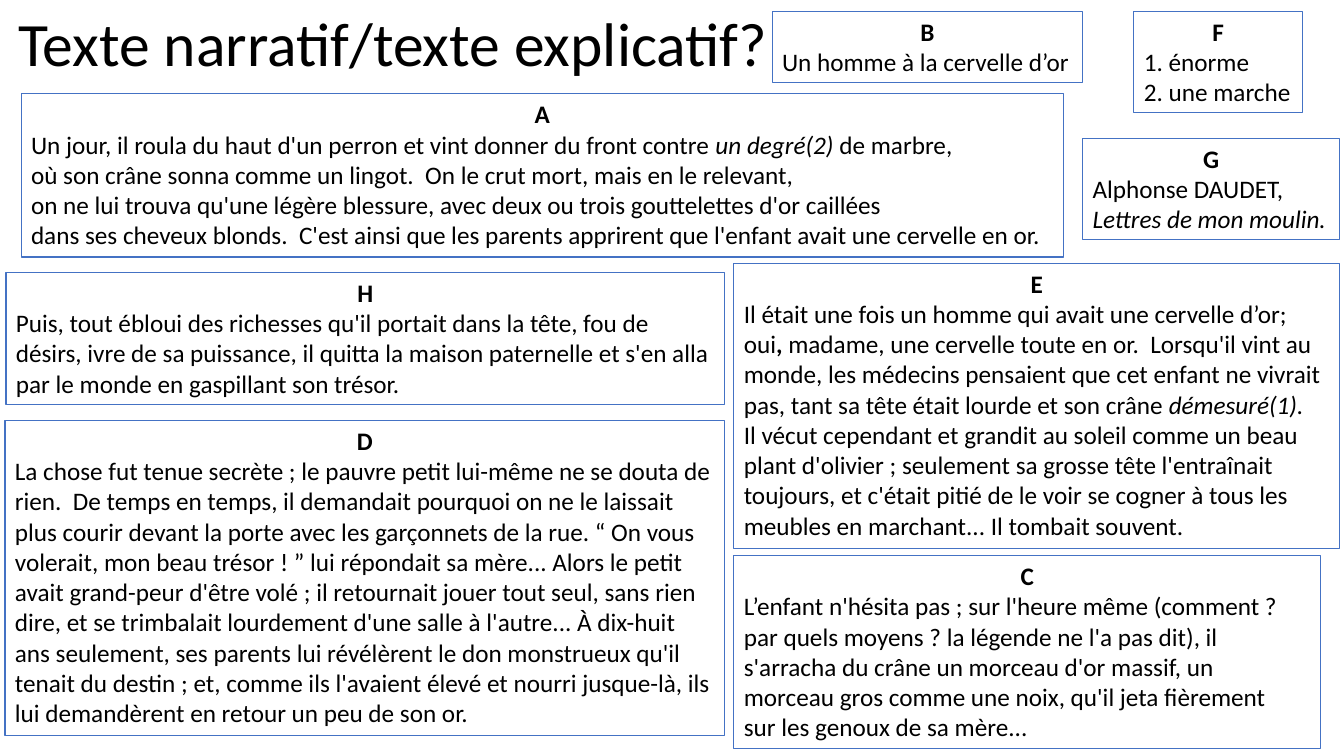
from pptx import Presentation
from pptx.dml.color import RGBColor
from pptx.enum.shapes import MSO_SHAPE
from pptx.enum.text import MSO_ANCHOR, MSO_AUTO_SIZE, PP_ALIGN
from pptx.util import Pt

COLORS = {"text": "000000", "border": "4472C4"}

# letter, (left, top, width, height), wrap, paragraphs;
# a paragraph is a string or a list of (text, style) pairs
EXTRACTS = [
    ("A", (15.1, 67, 744.5, 116.6), False, [
        [("Un jour, il roula du haut d'un perron et vint donner du front contre ", ""),
         ("un degré(2) ", "italic"), ("de marbre,", "")],
        "où son crâne sonna comme un lingot.  On le crut mort, mais en le relevant,",
        "on ne lui trouva qu'une légère blessure, avec deux ou trois gouttelettes d'or caillées",
        "dans ses cheveux blonds.  C'est ainsi que les parents apprirent que l'enfant "
        "avait une cervelle en or.",
    ]),
    ("E", (524.2, 187.9, 432.7, 203.8), True, [
        "Il était une fois un homme qui avait une cervelle d’or;",
        [("oui", ""), (", ", "bold"),
         ("madame, une cervelle toute en or.  Lorsqu'il vint au monde, les médecins "
          "pensaient que cet enfant ne vivrait pas, tant sa tête était lourde et son crâne ", ""),
         ("démesuré(1).", "italic")],
        "Il vécut cependant et grandit au soleil comme un beau plant d'olivier ; seulement "
        "sa grosse tête l'entraînait toujours, et c'était pitié de le voir se cogner à tous "
        "les meubles en marchant... Il tombait souvent.",
    ]),
    ("F", (810, 7.9, 120.2, 72.7), False, ["1. énorme", "2. une marche"]),
    ("G", (773.3, 98.6, 183.6, 72.7), False, [
        "Alphonse DAUDET,",
        [("Lettres de mon moulin.", "italic")],
    ]),
    ("H", (4.3, 194.4, 513.4, 94.3), True, [
        "Puis, tout ébloui des richesses qu'il portait dans la tête, fou de désirs, ivre de sa "
        "puissance, il quitta la maison paternelle et s'en alla par le monde en gaspillant "
        "son trésor.",
    ]),
    ("B", (551.5, 7.9, 221.8, 51.1), False, ["Un homme à la cervelle d’or"]),
    ("D", (3.6, 300.2, 514.1, 225.4), True, [
        "La chose fut tenue secrète ; le pauvre petit lui-même ne se douta de",
        "rien.  De temps en temps, il demandait pourquoi on ne le laissait plus courir devant "
        "la porte avec les garçonnets de la rue. “ On vous",
        "volerait, mon beau trésor ! ” lui répondait sa mère... Alors le petit",
        "avait grand-peur d'être volé ; il retournait jouer tout seul, sans rien",
        "dire, et se trimbalait lourdement d'une salle à l'autre... À dix-huit ans seulement, "
        "ses parents lui révélèrent le don monstrueux qu'il tenait du destin ; et, comme ils "
        "l'avaient élevé et nourri jusque-là, ils lui demandèrent en retour un peu de son or.",
    ]),
    ("C", (524.2, 396.7, 419, 138.2), True, [
        "L’enfant n'hésita pas ; sur l'heure même (comment ?",
        "par quels moyens ? la légende ne l'a pas dit), il",
        "s'arracha du crâne un morceau d'or massif, un",
        "morceau gros comme une noix, qu'il jeta fièrement",
        "sur les genoux de sa mère...",
    ]),
]


class Page:
    font = "Calibri"
    title_size = 44
    body_size = 18
    border_width = 0.75

    def __init__(self, slide):
        self.s = slide

    def format_run(self, r, size, style=""):
        r.font.name = self.font
        r.font.size = Pt(size)
        r.font.color.rgb = RGBColor.from_string(COLORS["text"])
        r.font.bold = style == "bold"
        r.font.italic = style == "italic"

    def title(self, text, box):
        tf = self.s.shapes.add_textbox(*map(Pt, box)).text_frame
        tf.word_wrap = True
        tf.vertical_anchor = MSO_ANCHOR.MIDDLE
        tf.text = text
        p = tf.paragraphs[0]
        p.alignment = PP_ALIGN.CENTER
        p.line_spacing = 0.9
        self.format_run(p.runs[0], self.title_size)

    def paragraph(self, p, content, align=PP_ALIGN.LEFT):
        p.alignment = align
        pairs = [(content, "")] if isinstance(content, str) else content
        for text, style in pairs:
            r = p.add_run()
            r.text = text
            self.format_run(r, self.body_size, style)

    def extract(self, letter, box, wrap, paragraphs):
        """Draw a bordered box: centred bold letter above left-aligned text."""
        sp = self.s.shapes.add_shape(MSO_SHAPE.RECTANGLE, *map(Pt, box))
        sp.shadow.inherit = False
        sp.fill.background()
        sp.line.color.rgb = RGBColor.from_string(COLORS["border"])
        sp.line.width = Pt(self.border_width)
        tf = sp.text_frame
        tf.word_wrap = wrap
        tf.auto_size = MSO_AUTO_SIZE.SHAPE_TO_FIT_TEXT
        tf.vertical_anchor = MSO_ANCHOR.TOP
        self.paragraph(tf.paragraphs[0], [(letter, "bold")], PP_ALIGN.CENTER)
        for content in paragraphs:
            self.paragraph(tf.add_paragraph(), content)


def main():
    prs = Presentation()
    prs.slide_width, prs.slide_height = Pt(960), Pt(540)
    page = Page(prs.slides.add_slide(prs.slide_layouts[6]))
    page.title("Texte narratif/texte explicatif?", (-67.7, -18.7, 697, 104.4))
    for extract in EXTRACTS:
        page.extract(*extract)
    prs.save("out.pptx")


if __name__ == "__main__":
    main()
